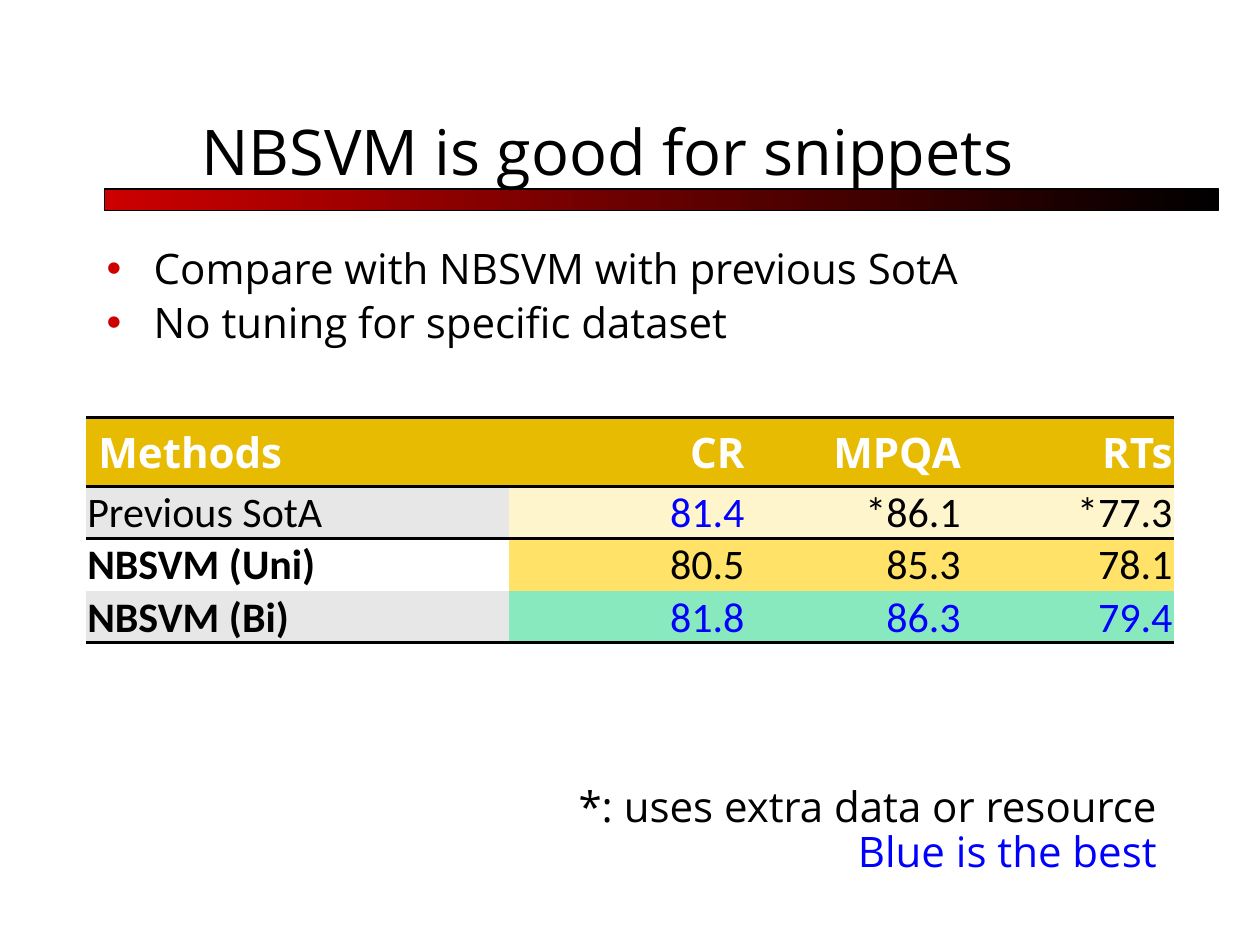
from lxml import etree
from pptx import Presentation
from pptx.dml.color import RGBColor
from pptx.enum.shapes import MSO_SHAPE
from pptx.enum.text import MSO_ANCHOR, PP_ALIGN
from pptx.oxml.ns import qn
from pptx.util import Cm, Pt

LEFT, RIGHT = PP_ALIGN.LEFT, PP_ALIGN.RIGHT
TOP, MIDDLE, BOTTOM = MSO_ANCHOR.TOP, MSO_ANCHOR.MIDDLE, MSO_ANCHOR.BOTTOM
RECT = MSO_SHAPE.RECTANGLE
PLAIN = "{2D5ABB26-0587-4C30-8999-92F81FD0307C}"

HUES = {
    "black": "000000", "white": "FFFFFF", "red": "CC0000", "blue": "0000FF",
    "gold": "E7BB01", "gray": "E7E7E7", "cream": "FFF5CC",
    "yellow": "FFE267", "green": "88E9BE",
}


def hue(name):
    return RGBColor.from_string(HUES[name])


def write(frame, text, size=24, font="Open Sans", color="black", bold=False,
          align=LEFT, space=0, line=0.9, bullet=False, first=True):
    """Put text in the first paragraph of a frame, or in a new one."""
    para = frame.paragraphs[0] if first else frame.add_paragraph()
    if bullet:
        props = para._p.get_or_add_pPr()
        props.set("marL", str(Cm(0.95)))
        props.set("indent", str(-Cm(0.95)))
        tint = etree.SubElement(props, qn("a:buClr"))
        etree.SubElement(tint, qn("a:srgbClr"), val=HUES["red"])
        etree.SubElement(props, qn("a:buFont"), typeface="Arial")
        etree.SubElement(props, qn("a:buChar"), char="•")
    para.alignment = align
    para.line_spacing = line
    para.space_before = Pt(space)
    run = para.add_run()
    run.text = text
    run.font.size = Pt(size)
    run.font.name = font
    run.font.bold = bold
    run.font.color.rgb = hue(color)


deck = Presentation()
deck.slide_width, deck.slide_height = Cm(25.4), Cm(19.05)
slide = deck.slides.add_slide(deck.slide_layouts[6])

# Gradient bar under the title
bar = slide.shapes.add_shape(RECT, Cm(2.11), Cm(3.81), Cm(22.45), Cm(0.43))
bar.shadow.inherit = False
bar.fill.gradient()
bar.fill.gradient_angle = 0
for stop, name in zip(bar.fill.gradient_stops, ("red", "black")):
    stop.color.rgb = hue(name)
bar.line.color.rgb = hue("black")
bar.line.width = Pt(0.75)

# Title, bullets and footnote
boxes = []
for place in ((3.81, 1.07, 21.59, 2.74), (1.9, 4.88, 21.59, 2.36),
              (8.71, 15.72, 14.86, 3.33)):
    frame = slide.shapes.add_textbox(*map(Cm, place)).text_frame
    frame.word_wrap = True
    boxes.append(frame)
title, body, note = boxes

title.vertical_anchor = BOTTOM
title.margin_bottom = 0
write(title, "NBSVM is good for snippets", size=36)

write(body, "Compare with NBSVM with previous SotA", bullet=True)
write(body, "No tuning for specific dataset", bullet=True, space=4.8, first=False)

write(note, "*: uses extra data or resource", align=RIGHT)
write(note, "Blue is the best", color="blue", align=RIGHT, first=False)

# Results: label fill, score fill, label bold, texts
rows = [
    ("gold", "gold", True, ("Methods", "CR", "MPQA", "RTs")),
    ("gray", "cream", False, ("Previous SotA", "81.4", "*86.1", "*77.3")),
    ("white", "yellow", True, ("NBSVM (Uni)", "80.5", "85.3", "78.1")),
    ("gray", "green", True, ("NBSVM (Bi)", "81.8", "86.3", "79.4")),
]
best = {"81.4", "81.8", "86.3", "79.4"}
rules = {0: ("a:lnT", "a:lnB"), 1: ("a:lnT",), 3: ("a:lnB",)}

grid = slide.shapes.add_table(4, 4, Cm(1.73), Cm(8.41), Cm(21.94), Cm(4.55)).table
grid._tbl.tblPr[0].text = PLAIN
grid.horz_banding = False
for col, width in zip(grid.columns, (8.54, 4.77, 4.36, 4.27)):
    col.width = Cm(width)

for r, (side, main, strong, texts) in enumerate(rows):
    head = r == 0
    grid.rows[r].height = Cm(1.4 if head else 1.05)
    for c, text in enumerate(texts):
        cell = grid.cell(r, c)
        label = c == 0
        if not (head and label):
            cell.margin_left = cell.margin_right = cell.margin_top = Cm(0.03)
            cell.margin_bottom = 0
        cell.vertical_anchor = BOTTOM if not head else TOP if label else MIDDLE
        cell.fill.solid()
        cell.fill.fore_color.rgb = hue(side if label else main)
        write(cell.text_frame, text, line=1,
              font="Open Sans" if head else "Calibri",
              color="white" if head else "blue" if text in best else "black",
              bold=head or (label and strong),
              align=LEFT if label else RIGHT)
        props = cell._tc.get_or_add_tcPr()
        for i, tag in enumerate(rules.get(r, ())):
            edge = etree.Element(qn(tag), w=str(Pt(2)))
            paint = etree.SubElement(edge, qn("a:solidFill"))
            etree.SubElement(paint, qn("a:srgbClr"), val=HUES["black"])
            props.insert(i, edge)

deck.save("out.pptx")
